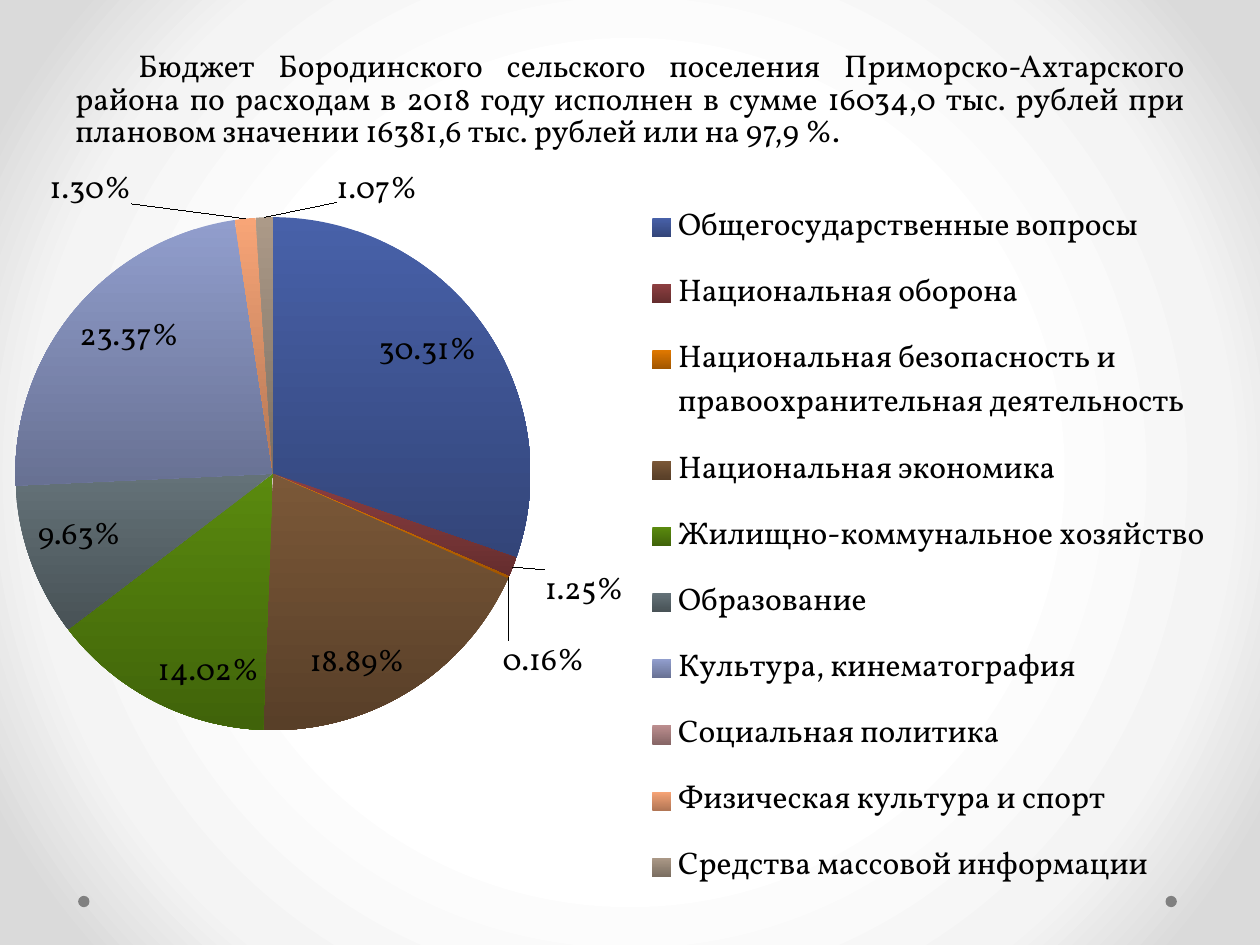
from lxml import etree
from pptx import Presentation
from pptx.chart.data import CategoryChartData
from pptx.dml.color import RGBColor
from pptx.enum.chart import XL_CHART_TYPE, XL_LABEL_POSITION, XL_LEGEND_POSITION
from pptx.enum.shapes import MSO_SHAPE
from pptx.enum.text import MSO_ANCHOR, PP_ALIGN
from pptx.oxml import parse_xml
from pptx.oxml.ns import nsdecls, qn
from pptx.util import Inches, Pt

COLORS = {"text": "000000", "dot": "808080"}
BACKDROP = [(50, "FFFFFF"), (76, "F4F4F4"), (92, "DADADA")]
TITLE = ("\tБюджет Бородинского сельского поселения Приморско-Ахтарского района "
         "по расходам в 2018 году исполнен в сумме 16034,0 тыс. рублей при плановом "
         "значении 16381,6 тыс. рублей или на 97,9 %.")
# Budget section, share in percent, colour at the top of its slice
EXPENSES = [
    ("Общегосударственные вопросы", 30.31, "4861A9"),
    ("Национальная оборона", 1.25, "8D3F41"),
    ("Национальная безопасность и правоохранительная деятельность", 0.16, "E07800"),
    ("Национальная экономика", 18.89, "7B5838"),
    ("Жилищно-коммунальное хозяйство", 14.02, "5A8A0E"),
    ("Образование", 9.63, "647278"),
    ("Культура, кинематография", 23.37, "919ECD"),
    ("Социальная политика", 0, "BC8E8F"),
    ("Физическая культура и спорт", 1.3, "F8A577"),
    ("Средства массовой информации", 1.07, "AC9A88"),
]
# Slice number: label shift as shares of the chart's width and height
LABEL_SHIFTS = {1: (0.02, 0), 2: (-0.01, 0.08), 8: (-0.09, -0.01), 9: (0.09, -0.01)}
EMPTY_SLICE = 7


def darker(color, share=0.72):
    return RGBColor(*(int(part * share) for part in RGBColor.from_string(color)))


def manual_layout(x, y, width=None, height=None, inner=False):
    """Layout element; without a size, x and y are a shift from the default place."""
    layout = etree.Element(qn("c:layout"))
    manual = etree.SubElement(layout, qn("c:manualLayout"))
    values = [("x", x), ("y", y)]
    if width is not None:
        values = [("xMode", "edge"), ("yMode", "edge"), *values, ("w", width), ("h", height)]
    if inner:
        values.insert(0, ("layoutTarget", "inner"))
    for tag, value in values:
        etree.SubElement(manual, qn(f"c:{tag}")).set("val", str(value))
    return layout


class SlideBuilder:
    font = "Vollkorn"
    size = Pt(18)

    def __init__(self, deck):
        self.deck = deck
        self.page = deck.slides.add_slide(deck.slide_layouts[6])

    def area(self, left, top, width, height):
        """Turn shares of the slide's size into lengths."""
        wide, high = self.deck.slide_width, self.deck.slide_height
        return int(left * wide), int(top * high), int(width * wide), int(height * high)

    def style(self, font):
        font.name, font.size = self.font, self.size
        font.color.rgb = RGBColor.from_string(COLORS["text"])

    def backdrop(self, stops):
        fill = self.page.background.fill
        fill.solid()
        solid = self.page._element.find(".//" + qn("a:solidFill"))
        marks = "".join(f'<a:gs pos="{share * 1000}"><a:srgbClr val="{color}"/></a:gs>'
                        for share, color in stops)
        solid.getparent().replace(solid, parse_xml(
            f'<a:gradFill rotWithShape="1" {nsdecls("a")}><a:gsLst>{marks}</a:gsLst>'
            '<a:path path="circle"><a:fillToRect l="50000" t="50000" r="50000" b="50000"/>'
            '</a:path></a:gradFill>'))

    def dot(self, left, top, diameter):
        x, y, width, _ = self.area(left, top, diameter, 0)
        dot = self.page.shapes.add_shape(MSO_SHAPE.OVAL, x, y, width, width)
        dot.shadow.inherit = False
        dot.fill.solid()
        dot.fill.fore_color.rgb = RGBColor.from_string(COLORS["dot"])
        dot.line.fill.background()

    def title(self, text, *place):
        frame = self.page.shapes.add_textbox(*self.area(*place)).text_frame
        frame.word_wrap = True
        frame.vertical_anchor = MSO_ANCHOR.BOTTOM
        frame.text = text
        para = frame.paragraphs[0]
        para.alignment = PP_ALIGN.JUSTIFY
        para.line_spacing = 0.85
        self.style(para.runs[0].font)

    def pie(self, expenses, *place):
        data = CategoryChartData()
        data.categories = [name for name, _, _ in expenses]
        data.add_series("Series 1", [share for _, share, _ in expenses])
        chart = self.page.shapes.add_chart(
            XL_CHART_TYPE.PIE, *self.area(*place), data).chart
        chart.has_title = False
        self.style(chart.font)
        plot = chart.plots[0]
        plot.vary_by_categories = True
        for index, (_, _, color) in enumerate(expenses):
            fill = plot.series[0].points[index].format.fill
            fill.gradient()
            fill.gradient_angle = 270
            top, bottom = fill.gradient_stops
            top.color.rgb, bottom.color.rgb = RGBColor.from_string(color), darker(color)
            top.position, bottom.position = 0, 1
        plot_area = chart._chartSpace.chart.plotArea
        for old in plot_area.findall(qn("c:layout")):
            plot_area.remove(old)
        plot_area.insert(0, manual_layout(0.012, 0.065, 0.411, 0.684, inner=True))
        self.legend(chart)
        self.labels(plot.series[0])

    def legend(self, chart):
        chart.has_legend = True
        legend = chart.legend
        legend.position = XL_LEGEND_POSITION.RIGHT
        legend.include_in_layout = False
        self.style(legend.font)
        element = legend._element
        for old in element.findall(qn("c:layout")):
            element.remove(old)
        element.find(qn("c:legendPos")).addnext(manual_layout(0.5, 0.02, 0.48, 0.97))

    def labels(self, series):
        labels = series.data_labels
        labels.show_percentage, labels.show_value = True, False
        labels.show_leader_lines = True if hasattr(labels, "show_leader_lines") else None
        labels.number_format, labels.number_format_is_linked = "0.00%", False
        labels.position = XL_LABEL_POSITION.INSIDE_END
        self.style(labels.font)
        for index, shift in LABEL_SHIFTS.items():
            label = series.points[index].data_label
            self.style(label.font)
            label.position = XL_LABEL_POSITION.OUTSIDE_END
            element = label._dLbl
            element.find(qn("c:idx")).addnext(manual_layout(*shift))
            element.find(qn("c:showVal")).set("val", "0")
            element.find(qn("c:showPercent")).set("val", "1")
            number = etree.Element(qn("c:numFmt"), formatCode="0.00%", sourceLinked="0")
            element.find(qn("c:layout")).addnext(number)
        hidden = series.points[EMPTY_SLICE].data_label
        hidden.position = XL_LABEL_POSITION.OUTSIDE_END
        for child in list(hidden._dLbl)[1:]:
            hidden._dLbl.remove(child)
        etree.SubElement(hidden._dLbl, qn("c:delete")).set("val", "1")


def main():
    deck = Presentation()
    deck.slide_width, deck.slide_height = Inches(10), Inches(7.5)
    builder = SlideBuilder(deck)
    builder.backdrop(BACKDROP)
    for left in (0.925, 0.062):
        builder.dot(left, 0.948, 0.009)
    builder.title(TITLE, 0.05, 0, 0.9, 0.164)
    builder.pie(EXPENSES, 0, 0.175, 0.996, 0.797)
    deck.save("out.pptx")


if __name__ == "__main__":
    main()
